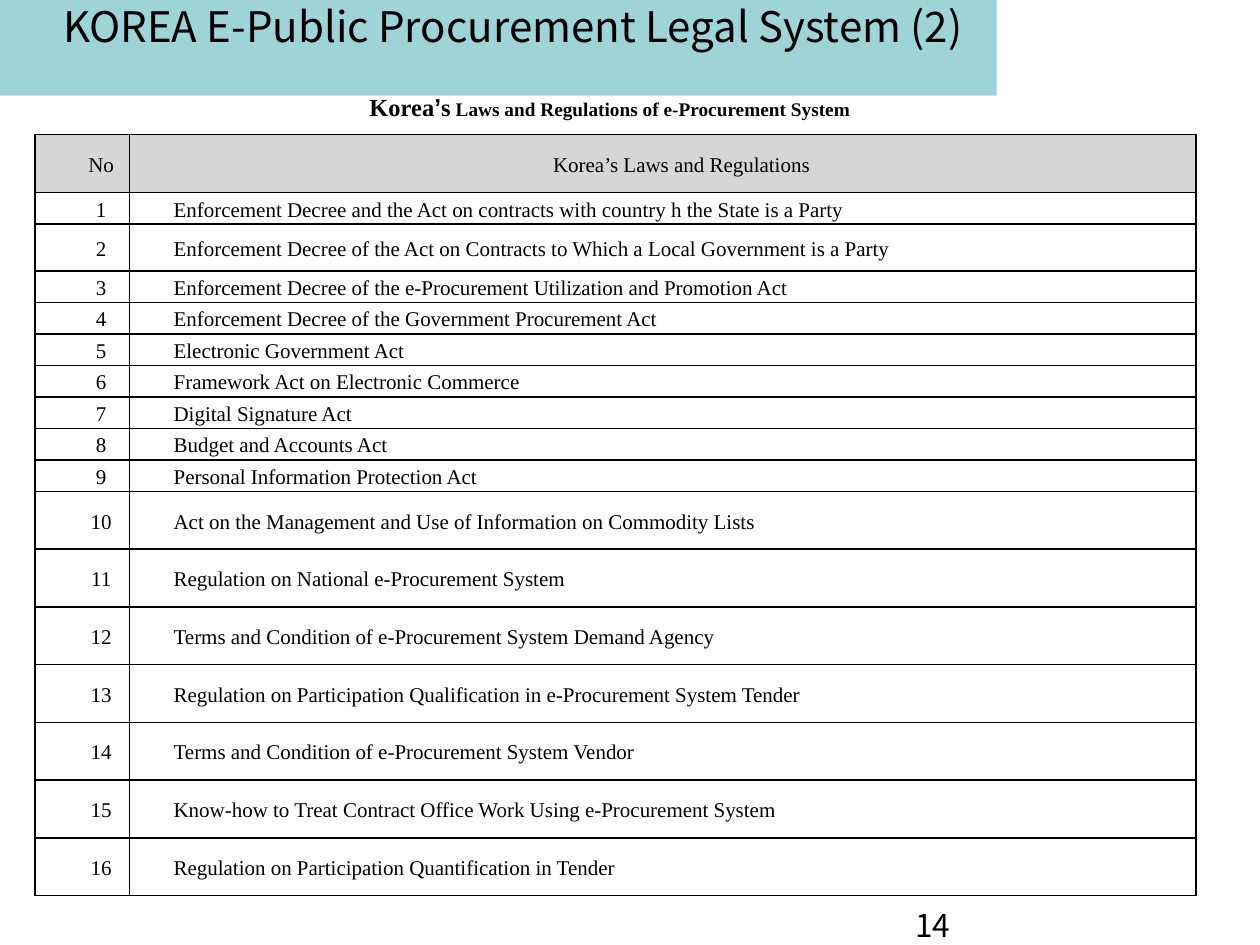
import pptx
import pptx.dml.color
import pptx.enum.shapes
import pptx.enum.text
import pptx.oxml
import pptx.oxml.ns
import pptx.util

Pt = pptx.util.Pt
ALIGN = pptx.enum.text.PP_ALIGN
ANCHOR = pptx.enum.text.MSO_ANCHOR
SERIF, SANS = "Times New Roman", "Noto Sans CJK KR"
SHORT, MEDIUM, TALL = 17.4, 26.8, 33
LAWS = [
    ("Enforcement Decree and the Act on contracts with country h the State is a Party", SHORT),
    ("Enforcement Decree of the Act on Contracts to Which a Local Government is a Party", MEDIUM),
    ("Enforcement Decree of the e-Procurement Utilization and Promotion Act", SHORT),
    ("Enforcement Decree of the Government Procurement Act", SHORT),
    ("Electronic Government Act", SHORT),
    ("Framework Act on Electronic Commerce", SHORT),
    ("Digital Signature Act", SHORT),
    ("Budget and Accounts Act", SHORT),
    ("Personal Information Protection Act", SHORT),
    ("Act on the Management and Use of Information on Commodity Lists", TALL),
    ("Regulation on National e-Procurement System", TALL),
    ("Terms and Condition of e-Procurement System Demand Agency", TALL),
    ("Regulation on Participation Qualification in e-Procurement System Tender", TALL),
    ("Terms and Condition of e-Procurement System Vendor", TALL),
    ("Know-how to Treat Contract Office Work Using e-Procurement System", TALL),
    ("Regulation on Participation Quantification in Tender", TALL),
]


def color(hex_string):
    return pptx.dml.color.RGBColor.from_string(hex_string)


def write(paragraph, text, font=SERIF, size=12, bold=False, align=None, indent=0, spacing=None):
    """Append a formatted run, and format its paragraph where asked."""
    run = paragraph.add_run()
    run.text = text
    run.font.name, run.font.size, run.font.bold = font, Pt(size), bold
    run.font.color.rgb = color("000000")
    if align is not None:
        paragraph.alignment = align
    if indent:
        properties = paragraph._p.get_or_add_pPr()
        properties.set("marL", str(Pt(indent)))
        properties.set("indent", "0")
    if spacing:
        paragraph.line_spacing = spacing


def place(shape, left, top, width, height):
    shape.left, shape.top = Pt(left), Pt(top)
    shape.width, shape.height = Pt(width), Pt(height)


def add_heading(slide, left, top, width, height):
    band = slide.shapes.add_shape(pptx.enum.shapes.MSO_SHAPE.RECTANGLE,
                                  Pt(left), Pt(top), Pt(width), Pt(height))
    band.shadow.inherit = False
    band.fill.solid()
    band.fill.fore_color.rgb = color("9ED3D7")
    band.line.fill.background()

    title = slide.shapes.title
    title._element.addprevious(band._element)
    place(title, left - 31, top, 648, 43.2)
    frame = title.text_frame
    frame.auto_size = pptx.enum.text.MSO_AUTO_SIZE.NONE
    frame.vertical_anchor = ANCHOR.TOP
    write(frame.paragraphs[0], "KOREA E-Public Procurement Legal System (2)", font=SANS,
          size=24, align=ALIGN.CENTER, spacing=0.9)


def add_text_line(slide, left, top, width, height):
    frame = slide.shapes.add_textbox(Pt(left), Pt(top), Pt(width), Pt(height)).text_frame
    frame.word_wrap = True
    frame.vertical_anchor = ANCHOR.MIDDLE
    return frame.paragraphs[0]


def add_caption(slide, left, top, width, height):
    caption = add_text_line(slide, left, top, width, height)
    write(caption, "Korea", size=14, bold=True, align=ALIGN.CENTER, indent=144)
    write(caption, "’", font="Arial", size=14, bold=True)
    write(caption, "s", size=14, bold=True)
    write(caption, " Laws and Regulations of e-Procurement System", size=11, bold=True)


def add_borders(cell):
    properties = cell._tc.get_or_add_tcPr()
    for side in ("lnL", "lnR", "lnT", "lnB"):
        properties.append(pptx.oxml.parse_xml(
            f'<a:{side} {pptx.oxml.ns.nsdecls("a")} w="{Pt(1)}"><a:solidFill>'
            f'<a:srgbClr val="000000"/></a:solidFill></a:{side}>'))


def fill_cell(cell, text, align, fill=None):
    cell.margin_left = cell.margin_right = Pt(3.6)
    cell.margin_top = cell.margin_bottom = Pt(0.72)
    cell.vertical_anchor = ANCHOR.MIDDLE
    add_borders(cell)
    if fill:
        cell.fill.solid()
        cell.fill.fore_color.rgb = color(fill)
    else:
        cell.fill.background()
    write(cell.text_frame.paragraphs[0], text, align=align, indent=21.6, spacing=1.15)


def add_law_table(slide, left, top, width):
    heights = [TALL] + [height for _, height in LAWS]
    table = slide.shapes.add_table(len(heights), 2, Pt(left), Pt(top),
                                   Pt(width), Pt(sum(heights))).table
    table.horz_banding = table.first_row = False
    number_width = 54
    table.columns[0].width = Pt(number_width)
    table.columns[1].width = Pt(width - number_width)
    for row, height in zip(table.rows, heights):
        row.height = Pt(height)

    for column, heading in enumerate(("No", "Korea’s Laws and Regulations")):
        fill_cell(table.cell(0, column), heading, ALIGN.CENTER, fill="D6D6D6")
    for number, (law, _) in enumerate(LAWS, start=1):
        fill_cell(table.cell(number, 0), str(number), ALIGN.CENTER)
        fill_cell(table.cell(number, 1), law, ALIGN.JUSTIFY)


def main():
    presentation = pptx.Presentation()
    presentation.slide_width, presentation.slide_height = Pt(720), Pt(540)
    slide = presentation.slides.add_slide(presentation.slide_layouts[5])
    add_heading(slide, 0, 0, 569.5, 54.7)
    write(add_text_line(slide, 516, 517, 168, 23), "14", font=SANS, size=18)
    add_law_table(slide, 20, 77, 663.5)
    add_caption(slide, 0, 49, 553, 24.5)
    presentation.save("out.pptx")


if __name__ == "__main__":
    main()
